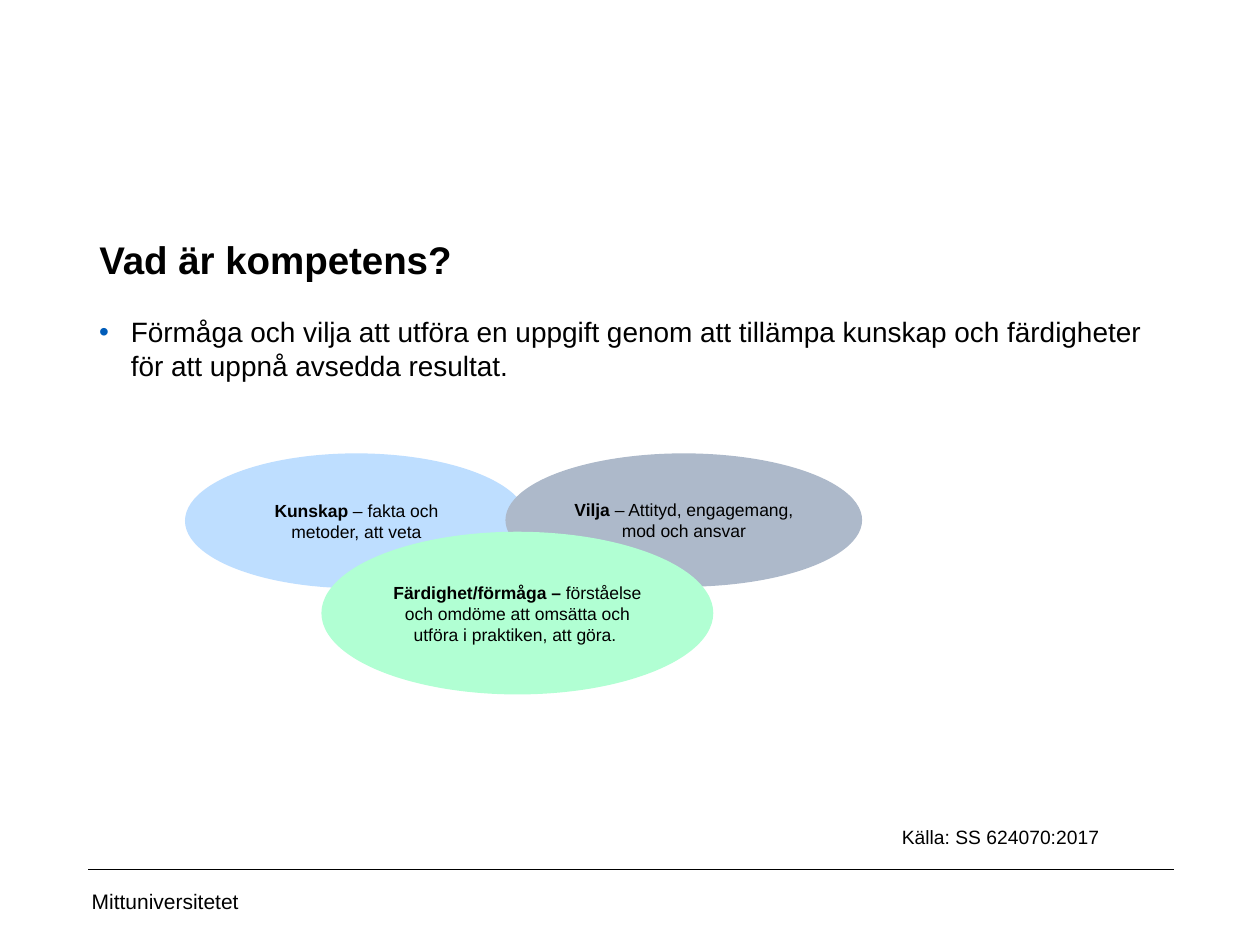
from lxml import etree
from pptx import Presentation
from pptx.dml.color import RGBColor
from pptx.enum.shapes import MSO_CONNECTOR as Link, MSO_SHAPE as Kind
from pptx.enum.text import MSO_ANCHOR as Anchor, PP_ALIGN as Align
from pptx.oxml import parse_xml
from pptx.oxml.ns import nsdecls, qn
from pptx.util import Cm, Pt


def color(code):
    return RGBColor.from_string(code)


def style(para, size, bold=False):
    font = para.font
    font.name, font.size, font.bold = "Arial", Pt(size), bold
    font.color.rgb = color("000000")


prs = Presentation()
prs.slide_width, prs.slide_height = Cm(25.4), Cm(19.05)
slide = prs.slides.add_slide(prs.slide_layouts[5])
shapes = slide.shapes

# Footer rule
rule = shapes.add_connector(Link.STRAIGHT, Cm(1.78), Cm(17.53), Cm(23.67), Cm(17.53))
rule.line.color.rgb = color("000000")
rule.line.width = Pt(0.25)
etree.SubElement(rule.element.spPr, qn("a:effectLst"))

# Title
title = shapes.title
title.left, title.top, title.width, title.height = Cm(1.75), Cm(4.29), Cm(21.97), Cm(1.8)
frame = title.text_frame
frame.text = "Vad är kompetens?"
frame.vertical_anchor = Anchor.TOP
para = frame.paragraphs[0]
para.alignment = Align.LEFT
para.line_spacing = Pt(36)
style(para, 22, True)

# Definition, source and footer text
notes = [
    (1.75, 6.22, 21.97, 10.67, 16, "Förmåga och vilja att utföra en uppgift genom att "
     "tillämpa kunskap och färdigheter för att uppnå avsedda resultat."),
    (17.93, 16.51, 6.25, 0.74, 11, "Källa: SS 624070:2017"),
    (1.75, 17.65, 5.72, 1.02, 12, "Mittuniversitetet"),
]
frames = []
for left, top, width, height, size, text in notes:
    box = shapes.add_textbox(Cm(left), Cm(top), Cm(width), Cm(height))
    frame = box.text_frame
    frame.word_wrap = True
    frame.text = text
    frames.append(frame)
    style(frame.paragraphs[0], size)
body, source, footer = frames
footer.vertical_anchor = Anchor.MIDDLE
footer.margin_left = Cm(0.1)

# Bullet of the definition
props = body.paragraphs[0]._p.get_or_add_pPr()
props.set("marL", str(Cm(0.64)))
props.set("indent", str(Cm(-0.64)))
marks = [
    f'<a:buClr {nsdecls("a")}><a:srgbClr val="005CB9"/></a:buClr>',
    f'<a:buFont {nsdecls("a")} typeface="Arial"/>',
    f'<a:buChar {nsdecls("a")} char="•"/>',
]
for spot, mark in enumerate(marks):
    props.insert(spot, parse_xml(mark))

# Overlapping ellipses
parts = [
    (3.73, 9.14, 6.91, 2.72, "BEDEFF", "Kunskap", " – fakta och metoder, att veta"),
    (10.19, 9.14, 7.19, 2.69, "ADB9CA", "Vilja", " – Attityd, engagemang, mod och ansvar"),
    (6.48, 10.72, 7.9, 3.28, "B1FFD3", "Färdighet/förmåga – ",
     "förståelse och omdöme att omsätta och utföra i praktiken, att göra. "),
]
for left, top, width, height, fill, term, text in parts:
    oval = shapes.add_shape(Kind.OVAL, Cm(left), Cm(top), Cm(width), Cm(height))
    oval.shadow.inherit = False
    oval.fill.solid()
    oval.fill.fore_color.rgb = color(fill)
    oval.line.fill.background()
    frame = oval.text_frame
    frame.word_wrap = True
    frame.vertical_anchor = Anchor.MIDDLE
    para = frame.paragraphs[0]
    para.alignment = Align.CENTER
    style(para, 10)
    for words, bold in ((term, True), (text, False)):
        run = para.add_run()
        run.text = words
        run.font.bold = bold

prs.save("out.pptx")
